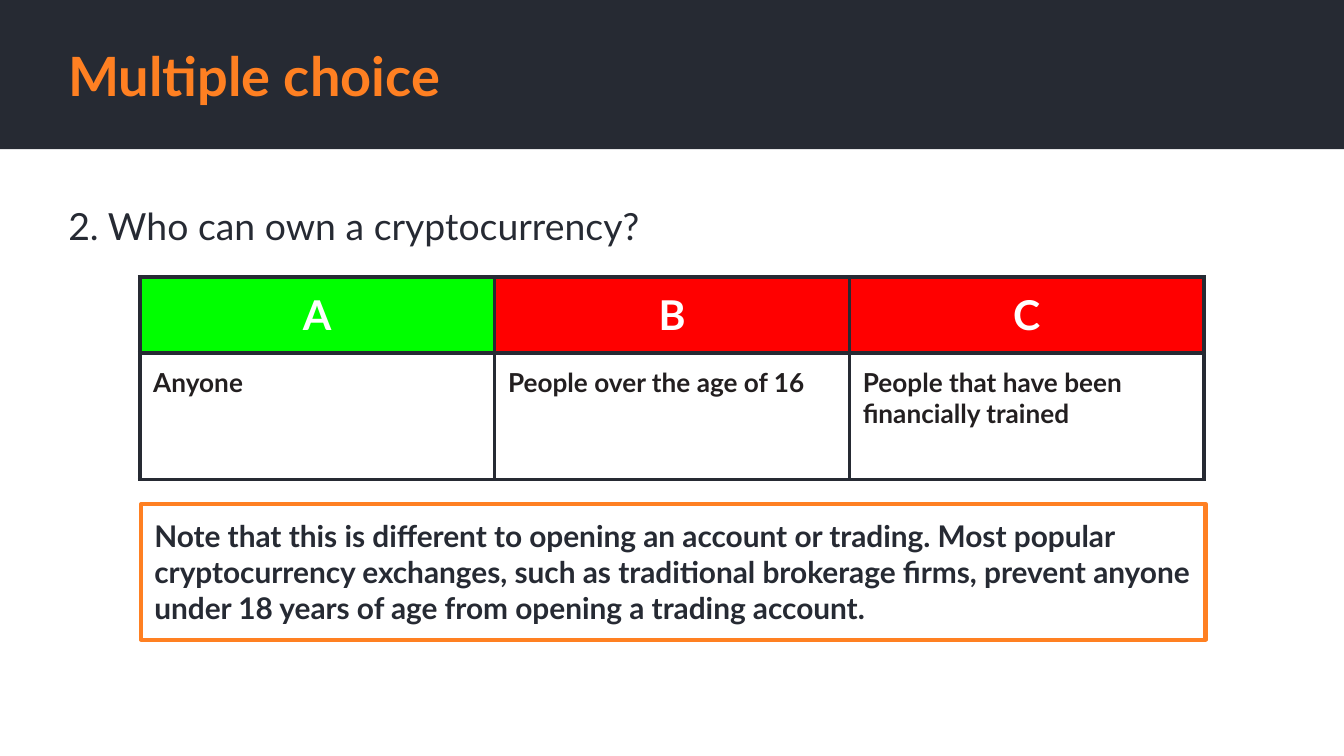
from lxml import etree
from pptx import Presentation
from pptx.dml.color import RGBColor
from pptx.enum.shapes import MSO_SHAPE
from pptx.enum.text import MSO_ANCHOR, PP_ALIGN
from pptx.oxml.ns import qn
from pptx.util import Inches, Pt

RECT = MSO_SHAPE.RECTANGLE
TOP, MID = MSO_ANCHOR.TOP, MSO_ANCHOR.MIDDLE
LEFT, CENTER = PP_ALIGN.LEFT, PP_ALIGN.CENTER
COLORS = {
    "dark": "262A33",
    "orange": "FF8022",
    "white": "FFFFFF",
    "green": "00FF00",
    "red": "FF0000",
    "ink": "231F20",
}
PAD = Inches(0.1)


def rgb(name):
    return RGBColor.from_string(COLORS[name])


def write(frame, text, size, color, bold=True, align=LEFT):
    para = frame.paragraphs[0]
    para.alignment = align
    run = para.add_run()
    run.text = text
    run.font.color.rgb = rgb(color)
    look = {"name": "Lato", "size": Pt(size), "bold": bold}
    for key, value in look.items():
        setattr(run.font, key, value)


prs = Presentation()
prs.slide_width = Inches(10)
prs.slide_height = Inches(10) * 9 // 16
slide = prs.slides.add_slide(prs.slide_layouts[6])
shapes = slide.shapes

band = shapes.add_shape(RECT, 0, 0, Inches(10), Inches(1.11))
title = shapes.add_textbox(Inches(0.41), Inches(0.28), Inches(8.74), Inches(0.56))
table = shapes.add_table(
    2, 3, Inches(1.04), Inches(2.06), Inches(7.92), Inches(1.4)
).table
note = shapes.add_shape(RECT, Inches(1.05), Inches(3.75), Inches(7.92), Inches(1.01))
query = shapes.add_textbox(Inches(0.41), Inches(1.41), Inches(8.38), Inches(0.54))

for shape, fill in ((band, "dark"), (note, "white")):
    shape.shadow.inherit = False
    shape.fill.solid()
    shape.fill.fore_color.rgb = rgb(fill)
band.line.fill.background()
note.line.color.rgb = rgb("orange")
note.line.width = Pt(2.25)

texts = [
    (title, MID, "Multiple choice", 29, "orange", True),
    (note, MID, "Note that this is different to opening an account or trading. "
     "Most popular cryptocurrency exchanges, such as traditional brokerage firms, "
     "prevent anyone under 18 years of age from opening a trading account.",
     16, "dark", True),
    (query, TOP, "2. Who can own a cryptocurrency?", 20, "dark", False),
]
for box, anchor, text, size, color, bold in texts:
    frame = box.text_frame
    layout = {
        "word_wrap": True, "vertical_anchor": anchor,
        "margin_left": PAD, "margin_right": PAD,
        "margin_top": PAD, "margin_bottom": PAD,
    }
    for key, value in layout.items():
        setattr(frame, key, value)
    write(frame, text, size, color, bold)

answers = [
    ("A", "Anyone", "green"),
    ("B", "People over the age of 16", "red"),
    ("C", "People that have been financially trained", "red"),
]
table.rows[0].height = Inches(0.46)
table.rows[1].height = Inches(0.94)
for col, (letter, answer, fill) in enumerate(answers):
    table.columns[col].width = Inches(2.64)
    head, body = table.cell(0, col), table.cell(1, col)
    write(head.text_frame, letter, 22, "white", align=CENTER)
    write(body.text_frame, answer, 14, "ink")
    for cell in (head, body):
        for side in ("left", "right", "top", "bottom"):
            setattr(cell, "margin_" + side, PAD)
        props = cell._tc.get_or_add_tcPr()
        for tag in ("a:lnL", "a:lnR", "a:lnT", "a:lnB"):
            edge = etree.SubElement(props, qn(tag), w=str(Pt(2.25)))
            paint = etree.SubElement(edge, qn("a:solidFill"))
            etree.SubElement(paint, qn("a:srgbClr"), val=COLORS["dark"])
    head.fill.solid()
    head.fill.fore_color.rgb = rgb(fill)
    body.fill.background()

prs.save("out.pptx")
